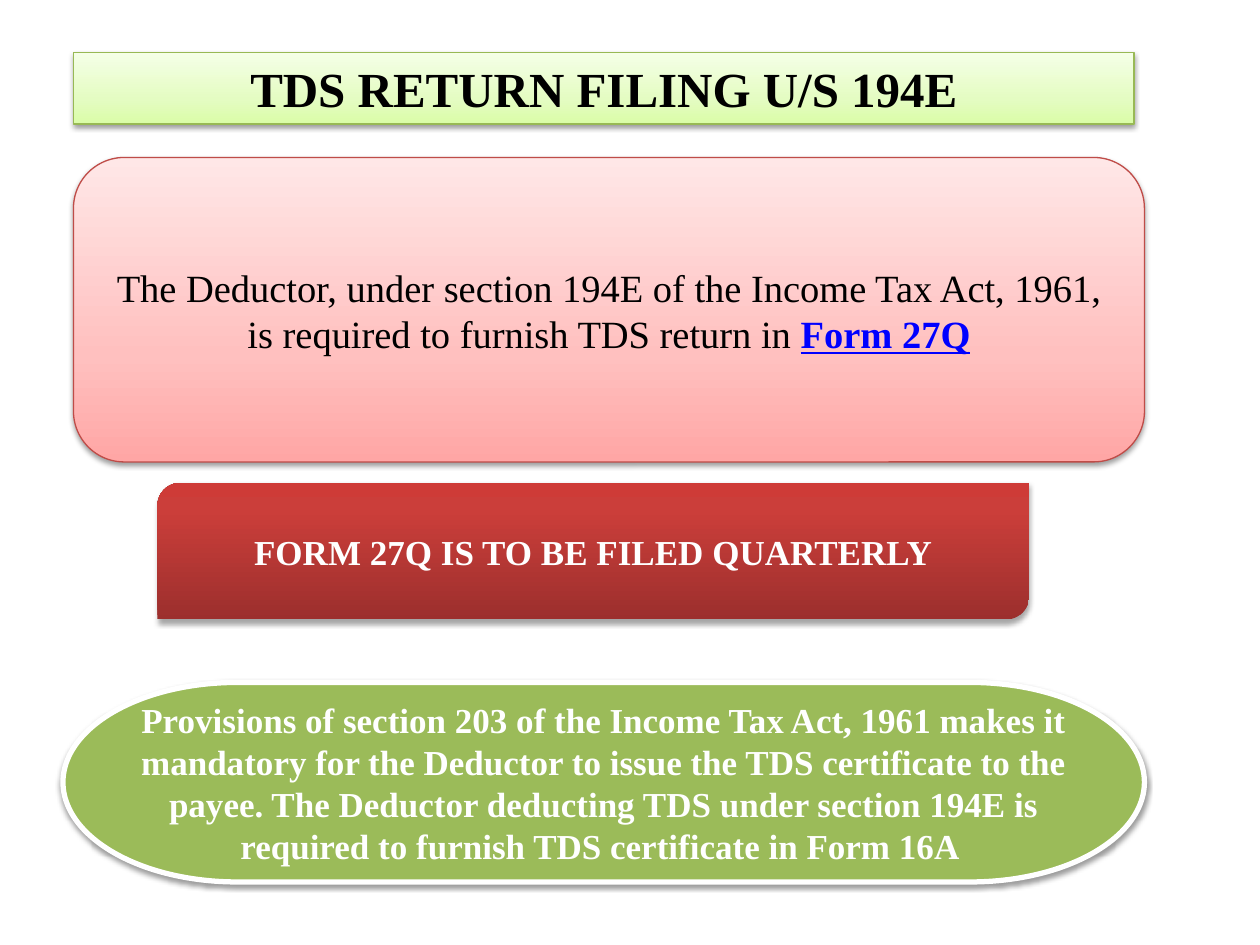
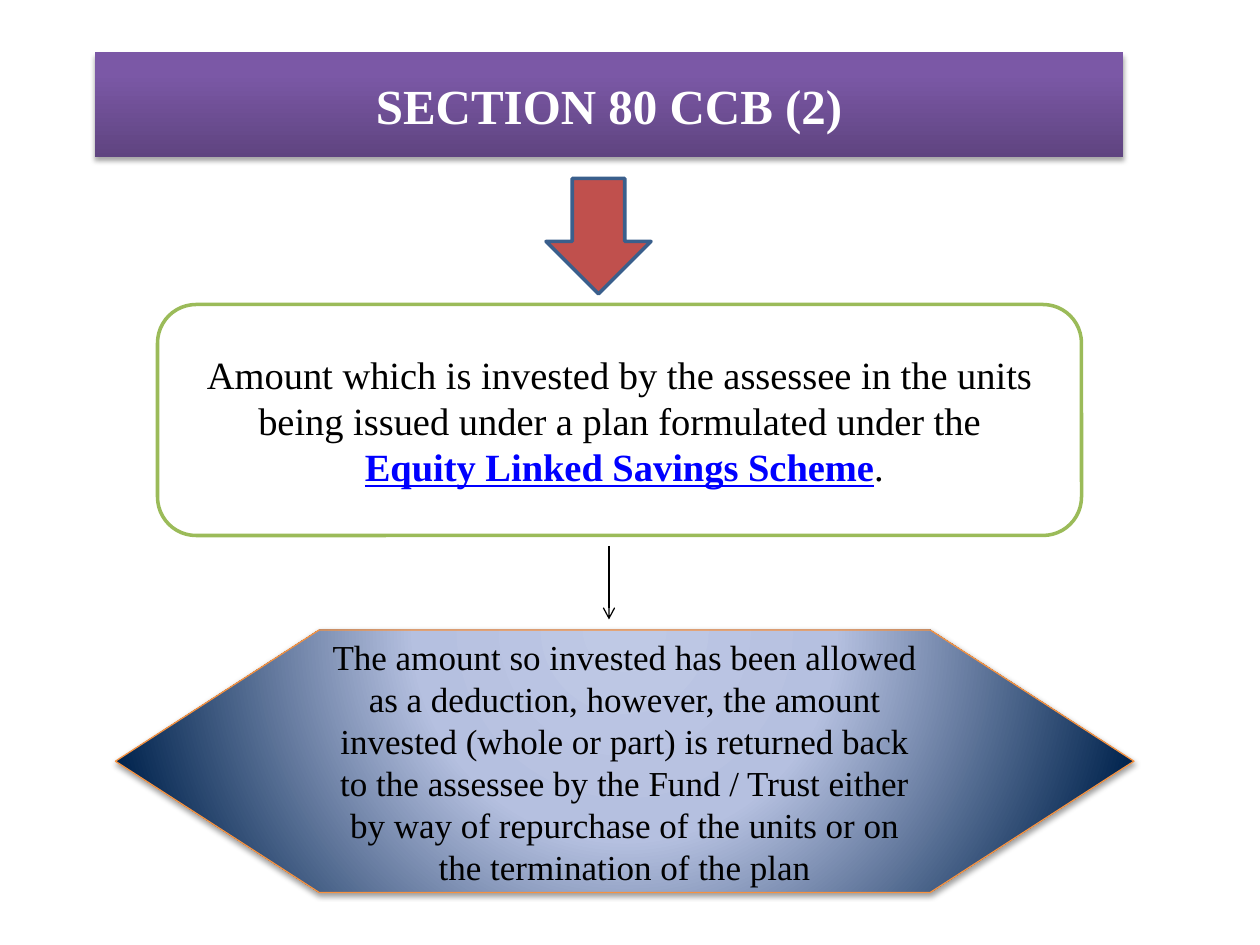
from dataclasses import dataclass
from lxml import etree
from pptx import Presentation
from pptx import util as u
from pptx.dml.color import RGBColor
from pptx.enum import shapes, text
from pptx.oxml.ns import qn


@dataclass(frozen=True)
class Theme:
    font: str = "Times New Roman"
    title: int = 28
    body: int = 22
    note: int = 20
    black: str = "000000"
    white: str = "FFFFFF"
    link: str = "0000FF"
    red: str = "C0504D"
    green: str = "9BBB59"
    blue_edge: str = "3A5F8C"
    green_edge: str = "98B955"
    red_edge: str = "BF4C48"
    orange_edge: str = "F69240"
    pale_green: tuple = ((0, "DAFDA7"), (35, "E4FCC2"), (100, "F5FFE7"))
    pale_red: tuple = ((0, "FFA6A5"), (35, "FFC0BF"), (100, "FFE7E7"))
    deep_red: tuple = ((0, "9C2F2D"), (80, "CB3E3A"), (100, "CE3B37"))
    purple: tuple = ((0, "5F4480"), (80, "7B58A6"), (100, "7C57A8"))
    blue_glow: tuple = ((0, "BFC9E5"), (40, "B5C0E0"), (100, "00234D"))
    soft_shadow: tuple = (38, 1.6)
    firm_shadow: tuple = (35, 1.8)


THEME = Theme()
KIND = shapes.MSO_SHAPE
TITLE = dict(size=THEME.title, bold=True)
BODY = dict(size=THEME.body, color=THEME.black)
NOTE = dict(size=THEME.note)
LINK = dict(size=THEME.body, color=THEME.link, bold=True, underline=True)

SLIDES = [
    dict(
        boxes=[
            dict(kind=KIND.RECTANGLE, at=(42, 30, 606, 41), fill=THEME.pale_green,
                 line=(THEME.green_edge, 0.75), shadow=THEME.soft_shadow,
                 paras=[[("TDS RETURN FILING U/S 194E", TITLE | dict(color=THEME.black))]]),
            dict(kind=KIND.ROUNDED_RECTANGLE, at=(42, 90, 612, 174), fill=THEME.pale_red,
                 line=(THEME.red_edge, 0.75), shadow=THEME.soft_shadow,
                 paras=[[("The Deductor, under section 194E of the Income Tax Act, 1961, "
                          "is required to furnish TDS return in ", BODY),
                         ("Form 27Q", LINK)]]),
            dict(kind=KIND.ROUND_2_DIAG_RECTANGLE, at=(90, 276, 498, 78), fill=THEME.deep_red,
                 shadow=THEME.firm_shadow,
                 paras=[[("FORM 27Q IS TO BE FILED QUARTERLY", NOTE | dict(bold=True))]]),
            dict(kind=KIND.FLOWCHART_TERMINATOR, at=(36, 390, 618, 114), fill=THEME.green,
                 line=(THEME.white, 3), shadow=THEME.soft_shadow,
                 paras=[[("Provisions of section 203 of the Income Tax Act, 1961 makes it "
                          "mandatory for the Deductor to issue the TDS certificate to the "
                          "payee. The Deductor deducting TDS under section 194E is "
                          "required to furnish TDS certificate in Form 16A ",
                          NOTE | dict(bold=True))]]),
        ],
        arrows=[],
    ),
    dict(
        boxes=[
            dict(kind=KIND.RECTANGLE, at=(54, 30, 588, 60), fill=THEME.purple,
                 shadow=THEME.firm_shadow, paras=[[("SECTION 80 CCB (2)", TITLE)]]),
            dict(kind=KIND.DOWN_ARROW, at=(312, 102, 60, 66), fill=THEME.red,
                 line=(THEME.blue_edge, 2)),
            dict(kind=KIND.ROUNDED_RECTANGLE, at=(90, 174, 528, 132), fill=THEME.white,
                 line=(THEME.green, 2),
                 paras=[[("Amount which is invested by the assessee in the units "
                          "being issued under a plan formulated under the", BODY)],
                        [(" ", BODY), ("Equity Linked Savings Scheme", LINK), (".", BODY)]]),
            dict(kind=KIND.FLOWCHART_PREPARATION, at=(66, 360, 582, 150), fill=THEME.blue_glow,
                 radial=True, line=(THEME.orange_edge, 0.75), shadow=THEME.soft_shadow,
                 paras=[[("The amount so invested has been allowed as a deduction, however, "
                          "the amount invested (whole or part) is returned back to the "
                          "assessee by the Fund / Trust either by way of repurchase of the "
                          "units or on the termination of the plan",
                          NOTE | dict(color=THEME.black))]]),
        ],
        arrows=[(348, 312, 348, 354)],
    ),
]


def add_node(parent, tag, **attributes):
    return etree.SubElement(parent, qn(tag), {k: str(v) for k, v in attributes.items()})


def paint_gradient(box, stops, radial):
    box.fill.gradient()
    gradient = box.element.spPr.find(qn("a:gradFill"))
    for child in list(gradient):
        gradient.remove(child)
    stop_list = add_node(gradient, "a:gsLst")
    for position, color in stops:
        stop = add_node(stop_list, "a:gs", pos=position * 1000)
        add_node(stop, "a:srgbClr", val=color)
    if radial:
        circle = add_node(gradient, "a:path", path="circle")
        add_node(circle, "a:fillToRect", l=50000, t=-80000, r=50000, b=180000)
    else:
        add_node(gradient, "a:lin", ang=16200000, scaled=0)


def cast_shadow(box, opacity, distance):
    effects = box.element.spPr.find(qn("a:effectLst"))
    shadow = add_node(effects, "a:outerShdw", blurRad=u.Pt(3.1), dist=u.Pt(distance),
                      dir=5400000, rotWithShape=0)
    color = add_node(shadow, "a:srgbClr", val=THEME.black)
    add_node(color, "a:alpha", val=opacity * 1000)


def add_span(para, words, *, size, color=THEME.white, bold=False, underline=False):
    span = para.add_run()
    span.text = words
    span.font.name = THEME.font
    span.font.size = u.Pt(size)
    span.font.bold = bold
    span.font.underline = underline
    span.font.color.rgb = RGBColor.from_string(color)


def add_box(page, *, kind, at, fill, line=None, shadow=None, radial=False, paras=()):
    box = page.shapes.add_shape(kind, *map(u.Pt, at))
    box.shadow.inherit = False
    if isinstance(fill, str):
        box.fill.solid()
        box.fill.fore_color.rgb = RGBColor.from_string(fill)
    else:
        paint_gradient(box, fill, radial)
    if line:
        color, width = line
        box.line.color.rgb = RGBColor.from_string(color)
        box.line.width = u.Pt(width)
    else:
        box.line.fill.background()
    if shadow:
        cast_shadow(box, *shadow)
    frame = box.text_frame
    frame.word_wrap = True
    frame.vertical_anchor = text.MSO_ANCHOR.MIDDLE
    for index, spans in enumerate(paras):
        para = frame.add_paragraph() if index else frame.paragraphs[0]
        para.alignment = text.PP_ALIGN.CENTER
        for words, style in spans:
            add_span(para, words, **style)


def add_arrow(page, ends):
    arrow = page.shapes.add_connector(shapes.MSO_CONNECTOR.STRAIGHT, *map(u.Pt, ends))
    arrow.line.color.rgb = RGBColor.from_string(THEME.black)
    arrow.line.width = u.Pt(0.75)
    add_node(arrow.line._get_or_add_ln(), "a:tailEnd", type="arrow")
    add_node(arrow._element.spPr, "a:effectLst")


def main():
    deck = Presentation()
    deck.slide_width, deck.slide_height = u.Pt(720), u.Pt(540)
    for content in SLIDES:
        page = deck.slides.add_slide(deck.slide_layouts[6])
        for box in content["boxes"]:
            add_box(page, **box)
        for ends in content["arrows"]:
            add_arrow(page, ends)
    deck.save("out.pptx")


if __name__ == "__main__":
    main()
